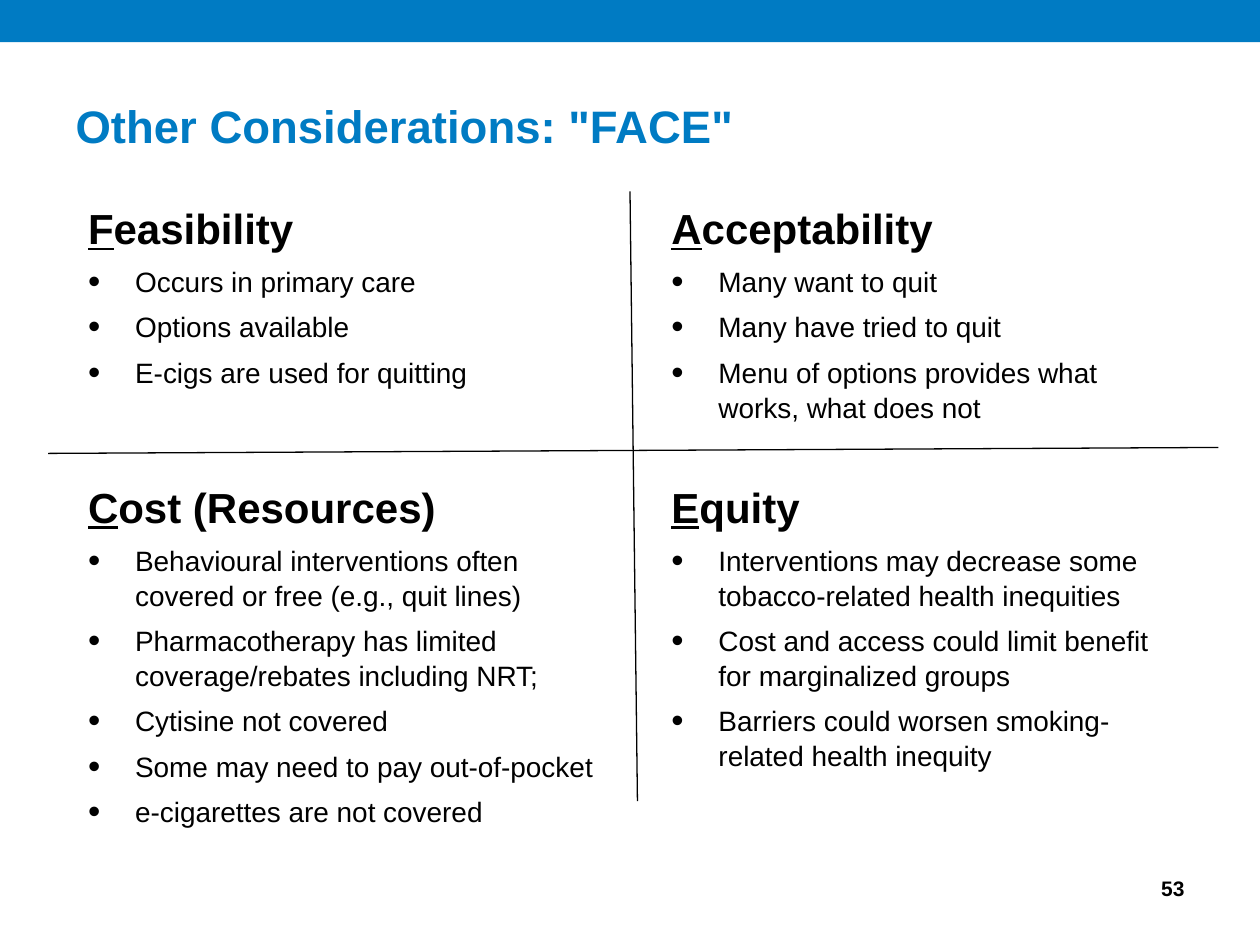
import pptx
import pptx.dml.color
import pptx.enum.shapes
import pptx.enum.text
import pptx.oxml.ns
import pptx.util
from lxml import etree

Cm = pptx.util.Cm
Pt = pptx.util.Pt
RGB = pptx.dml.color.RGBColor
Align = pptx.enum.text.PP_ALIGN
Anchor = pptx.enum.text.MSO_ANCHOR

BLUE = RGB(0x00, 0x7B, 0xC3)
BLACK = RGB(0x00, 0x00, 0x00)

LEFT, RIGHT = 1.52, 13.28
UPPER, LOWER = 3.91, 9.53

# placeholder index, box (left, top, width, height), heading, points
QUADS = [
    (1, (LEFT, UPPER, 9.75, 4.8), "Feasibility", [
        "Occurs in primary care",
        "Options available",
        "E-cigs are used for quitting"]),
    (3, (RIGHT, UPPER, 10.46, 4.65), "Acceptability", [
        "Many want to quit",
        "Many have tried to quit",
        "Menu of options provides what works, what does not"]),
    (2, (LEFT, LOWER, 10.8, 7.7), "Cost (Resources)", [
        "Behavioural interventions often covered or free (e.g., quit lines)",
        "Pharmacotherapy has limited coverage/rebates including NRT;",
        "Cytisine not covered",
        "Some may need to pay out-of-pocket",
        "e-cigarettes are not covered"]),
    (4, (RIGHT, LOWER, 10.82, 6.91), "Equity", [
        "Interventions may decrease some tobacco-related health inequities",
        "Cost and access could limit benefit for marginalized groups",
        "Barriers could worsen smoking-related health inequity"]),
]


def child(node, tag, **attrs):
    return etree.SubElement(node, pptx.oxml.ns.qn(tag), attrs)


class Deck:
    font = "Arial"

    def __init__(self):
        self.file = pptx.Presentation()
        self.file.slide_width = Cm(25.4)
        self.file.slide_height = Cm(19.05)
        self.slide = self.file.slides.add_slide(self.file.slide_layouts[4])

    def place(self, shape, box, anchor):
        shape.left, shape.top, shape.width, shape.height = map(Cm, box)
        frame = shape.text_frame
        frame.word_wrap = True
        frame.auto_size = pptx.enum.text.MSO_AUTO_SIZE.NONE
        frame.vertical_anchor = anchor
        return frame

    def style(self, para, size, color=BLACK, bold=False):
        for run in para.runs:
            font = run.font
            font.name, font.size, font.bold = self.font, Pt(size), bold
            font.color.rgb = color

    def band(self, box, color):
        bar = self.slide.shapes.add_shape(
            pptx.enum.shapes.MSO_SHAPE.RECTANGLE, *map(Cm, box))
        bar.shadow.inherit = False
        bar.fill.solid()
        bar.fill.fore_color.rgb = color
        bar.line.fill.background()

    def title(self, text, box):
        frame = self.place(self.slide.shapes.title, box, Anchor.MIDDLE)
        frame.text = text
        para = frame.paragraphs[0]
        para.alignment = Align.LEFT
        self.style(para, 26, BLUE, True)

    def space(self, para, indent):
        """Set the spacing and hanging indent that list paragraphs share."""
        para.alignment = Align.LEFT
        para.line_spacing = 1.04
        para.space_before, para.space_after = Pt(0), Pt(6)
        props = para._p.get_or_add_pPr()
        props.set("marL", str(Cm(indent)))
        props.set("indent", str(-Cm(indent)))
        return props

    def quad(self, index, box, head, points):
        """Fill one quadrant: heading with underlined initial, then bullets."""
        holder = self.slide.placeholders[index]
        frame = self.place(holder, box, Anchor.TOP)
        frame.text = head[0]
        para = frame.paragraphs[0]
        para.add_run().text = head[1:]
        child(self.space(para, 0), "a:buNone")
        self.style(para, 24, bold=True)
        para.runs[0].font.underline = True
        for point in points:
            para = frame.add_paragraph()
            para.text = point
            props = self.space(para, 0.95)
            child(props, "a:buSzPct", val="125000")
            child(props, "a:buFont", typeface=self.font)
            child(props, "a:buChar", char="•")
            self.style(para, 16)

    def rule(self, *ends):
        line = self.slide.shapes.add_connector(
            pptx.enum.shapes.MSO_CONNECTOR.STRAIGHT, *map(Cm, ends))
        line.line.color.rgb = BLACK
        line.line.width = Pt(0.75)
        child(line._element.spPr, "a:effectLst")

    def number(self, text, box):
        shape = self.slide.shapes.add_textbox(*map(Cm, box))
        frame = self.place(shape, box, Anchor.MIDDLE)
        frame.text = text
        para = frame.paragraphs[0]
        para.alignment = Align.RIGHT
        self.style(para, 12, bold=True)


def main():
    deck = Deck()
    deck.band((0, 0, 25.4, 0.85), BLUE)
    deck.title('Other Considerations: "FACE"', (1.27, 1.47, 22.86, 2.11))
    for quad in QUADS:
        deck.quad(*quad)
    deck.rule(12.7, 3.86, 12.85, 16.15)
    deck.rule(0.97, 9.14, 24.56, 9.02)
    deck.number("53", (19.76, 17.4, 4.37, 1.02))
    deck.file.save("out.pptx")


if __name__ == "__main__":
    main()
